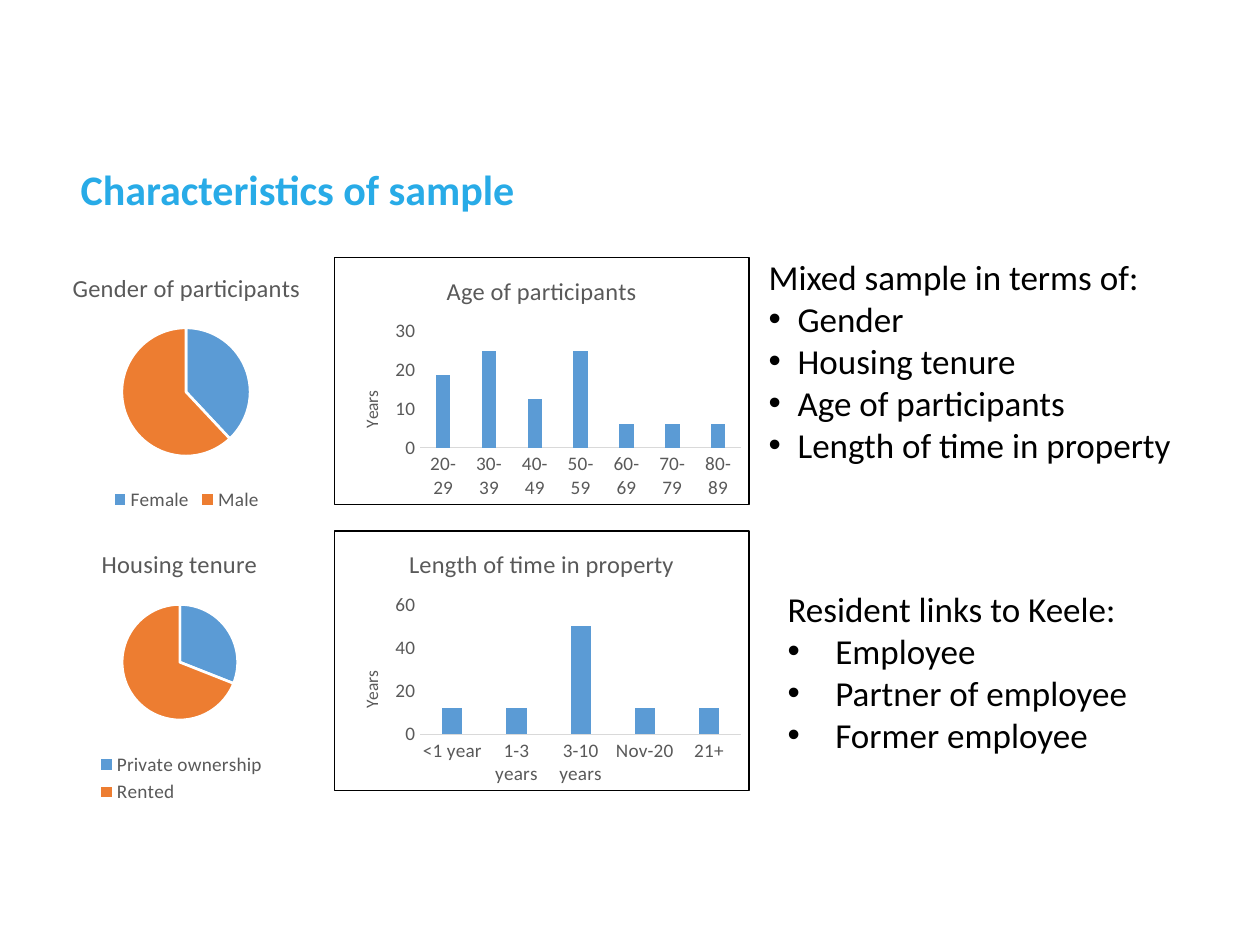
from dataclasses import dataclass
from typing import Optional

import lxml.etree
import pptx
import pptx.chart.data
import pptx.dml.color
import pptx.enum.chart
import pptx.enum.text
import pptx.oxml
import pptx.oxml.ns
import pptx.util

FONT = "Calibri"
COLORS = {"title": "28ABE7", "text": "000000", "label": "595959", "axis": "D9D9D9",
          "blue": "5B9BD5", "orange": "ED7D31", "white": "FFFFFF"}
SLIDE_WIDTH = pptx.util.Inches(10)
SLIDE_HEIGHT = pptx.util.Inches(7.5)
KIND = pptx.enum.chart.XL_CHART_TYPE


@dataclass
class Area:
    """Left, top, width and height in percent of the enclosing slide or chart."""
    left: float
    top: float
    width: float
    height: float

    def on_slide(self) -> tuple[int, int, int, int]:
        return (int(SLIDE_WIDTH * self.left / 100), int(SLIDE_HEIGHT * self.top / 100),
                int(SLIDE_WIDTH * self.width / 100), int(SLIDE_HEIGHT * self.height / 100))


@dataclass
class ChartPlan:
    title: str
    area: Area
    plot: Area
    values: dict[str, float]
    axis_step: Optional[int] = None  # columns only; the axis has three steps
    legend: Optional[Area] = None


@dataclass
class ListPlan:
    area: Area
    indent: float
    heading: str
    items: list[str]


PIES = [
    ChartPlan("Gender of participants", Area(-3.2, 26.93, 36, 27.73),
              Area(35.7, 28, 28.4, 49), {"Female": 38, "Male": 62}),
    ChartPlan("Housing tenure", Area(0, 56.13, 28.5, 29.47), Area(34, 26.5, 32.2, 41.7),
              {"Private ownership": 31, "Rented": 69}, legend=Area(26.5, 78.5, 48, 21)),
]
COLUMNS = [
    ChartPlan("Age of participants", Area(26.5, 27.2, 33, 26.27), Area(20.7, 29.8, 77.4, 47.2),
              {"20-29": 18.8, "30-39": 25, "40-49": 12.5, "50-59": 25,
               "60-69": 6.2, "70-79": 6.2, "80-89": 6.2}, axis_step=10),
    ChartPlan("Length of time in property", Area(26.5, 56.13, 33, 27.6),
              Area(20.7, 28.5, 77.4, 49.8),
              {"<1 year": 12, "1-3 years": 12, "3-10 years": 50, "Nov-20": 12, "21+": 12},
              axis_step=20),
]
LISTS = [
    ListPlan(Area(60, 26.4, 34.3, 23.73), 0.23, "Mixed sample in terms of:",
             ["Gender", "Housing tenure", "Age of participants", "Length of time in property"]),
    ListPlan(Area(61.5, 61.47, 29.2, 19.33), 0.38, "Resident links to Keele:",
             ["Employee", "Partner of employee", "Former employee"]),
]


def rgb(name: str) -> pptx.dml.color.RGBColor:
    return pptx.dml.color.RGBColor.from_string(COLORS[name])


def style_font(font, size: float, color: str, bold: bool = False) -> None:
    font.name, font.size, font.bold = FONT, pptx.util.Pt(size), bold
    font.color.rgb = rgb(color)


def place(shape, area: Area) -> None:
    shape.left, shape.top, shape.width, shape.height = area.on_slide()


def set_layout(element, area: Area, inner: bool) -> None:
    """Fix a plot area or legend at a place inside its chart."""
    for old in element.findall(pptx.oxml.ns.qn("c:layout")):
        element.remove(old)
    target = '<c:layoutTarget val="inner"/>' if inner else ""
    sizes = "".join(f'<c:{tag} val="{share / 100:.3f}"/>' for tag, share in
                    zip("xywh", (area.left, area.top, area.width, area.height)))
    layout = pptx.oxml.parse_xml(
        f'<c:layout {pptx.oxml.ns.nsdecls("c")}><c:manualLayout>{target}'
        f'<c:xMode val="edge"/><c:yMode val="edge"/>{sizes}</c:manualLayout></c:layout>')
    if inner:
        element.insert(0, layout)
    else:
        element.find(pptx.oxml.ns.qn("c:legendPos")).addnext(layout)


def set_border(chart, visible: bool) -> None:
    fill = f'<a:solidFill><a:srgbClr val="{COLORS["text"]}"/></a:solidFill>'
    frame = pptx.oxml.parse_xml(
        f'<c:spPr {pptx.oxml.ns.nsdecls("c", "a")}><a:noFill/>'
        f'<a:ln w="9525">{fill if visible else "<a:noFill/>"}</a:ln></c:spPr>')
    chart.element.find(pptx.oxml.ns.qn("c:chart")).addnext(frame)


def set_title(owner, text: str, size: float) -> None:
    paragraph = owner.text_frame.paragraphs[0]
    paragraph.text = text
    style_font(paragraph.font, size, "label")


def add_chart(page, plan: ChartPlan, kind):
    data = pptx.chart.data.CategoryChartData()
    data.categories = list(plan.values)
    data.add_series("Series 1", list(plan.values.values()))
    chart = page.shapes.add_chart(kind, *plan.area.on_slide(), data).chart
    style_font(chart.font, 10, "text")
    chart.has_title = True
    set_title(chart.chart_title, plan.title, 14)
    chart.chart_title.include_in_layout = False
    set_layout(chart.element.find(".//" + pptx.oxml.ns.qn("c:plotArea")), plan.plot, True)
    set_border(chart, kind == KIND.COLUMN_CLUSTERED)
    return chart


def add_pie(page, plan: ChartPlan) -> None:
    chart = add_chart(page, plan, KIND.PIE)
    for index, color in enumerate(("blue", "orange")):
        slice_format = chart.plots[0].series[0].points[index].format
        slice_format.fill.solid()
        slice_format.fill.fore_color.rgb = rgb(color)
        slice_format.line.color.rgb = rgb("white")
        slice_format.line.width = pptx.util.Pt(1.5)
    chart.has_legend = True
    chart.legend.position = pptx.enum.chart.XL_LEGEND_POSITION.BOTTOM
    chart.legend.include_in_layout = False
    style_font(chart.legend.font, 11, "label")
    if plan.legend:
        set_layout(chart.element.find(".//" + pptx.oxml.ns.qn("c:legend")), plan.legend, False)


def add_columns(page, plan: ChartPlan) -> None:
    chart = add_chart(page, plan, KIND.COLUMN_CLUSTERED)
    chart.has_legend = False
    plot = chart.plots[0]
    plot.gap_width, plot.overlap, plot.vary_by_categories = 219, -27, False
    fill = plot.series[0].format.fill
    fill.solid()
    fill.fore_color.rgb = rgb("blue")
    for axis in (chart.category_axis, chart.value_axis):
        axis.has_major_gridlines = False
        axis.major_tick_mark = axis.minor_tick_mark = pptx.enum.chart.XL_TICK_MARK.NONE
        style_font(axis.tick_labels.font, 11, "label")
    chart.category_axis.format.line.color.rgb = rgb("axis")
    chart.category_axis.format.line.width = pptx.util.Pt(0.75)
    values = chart.value_axis
    values.format.line.fill.background()
    values.minimum_scale, values.maximum_scale = 0, 3 * plan.axis_step
    values.major_unit = plan.axis_step
    values.has_title = True
    set_title(values.axis_title, "Years", 10)


def set_bullet(paragraph, indent: float, bullet: bool) -> None:
    properties = paragraph._p.get_or_add_pPr()
    hang = pptx.util.Inches(indent) if bullet else 0
    properties.set("marL", str(hang))
    properties.set("indent", str(-hang))
    mark = lxml.etree.SubElement(properties, pptx.oxml.ns.qn("a:buChar" if bullet else "a:buNone"))
    if bullet:
        mark.set("char", "•")


def fill_list(box, plan: ListPlan) -> None:
    place(box, plan.area)
    frame = box.text_frame
    frame.word_wrap = False
    frame.auto_size = pptx.enum.text.MSO_AUTO_SIZE.SHAPE_TO_FIT_TEXT
    frame.text = "\n".join([plan.heading, *plan.items])
    for index, paragraph in enumerate(frame.paragraphs):
        set_bullet(paragraph, plan.indent, index > 0)
        paragraph.space_before = pptx.util.Pt(0)
        style_font(paragraph.font, 20, "text")


def main() -> None:
    deck = pptx.Presentation()
    deck.slide_width, deck.slide_height = SLIDE_WIDTH, SLIDE_HEIGHT
    page = deck.slides.add_slide(deck.slide_layouts.get_by_name("Two Content"))
    title, *boxes = page.placeholders
    place(title, Area(5.4, 15.07, 86.2, 10.53))
    title.text_frame.text = "Characteristics of sample"
    title.text_frame.vertical_anchor = pptx.enum.text.MSO_ANCHOR.MIDDLE
    heading = title.text_frame.paragraphs[0]
    heading.alignment = pptx.enum.text.PP_ALIGN.LEFT
    heading.line_spacing = 0.9
    style_font(heading.font, 24, "title", bold=True)
    for plan in PIES:
        add_pie(page, plan)
    for plan in COLUMNS:
        add_columns(page, plan)
    for box, plan in zip(boxes, LISTS):
        fill_list(box, plan)
    deck.save("out.pptx")


if __name__ == "__main__":
    main()
